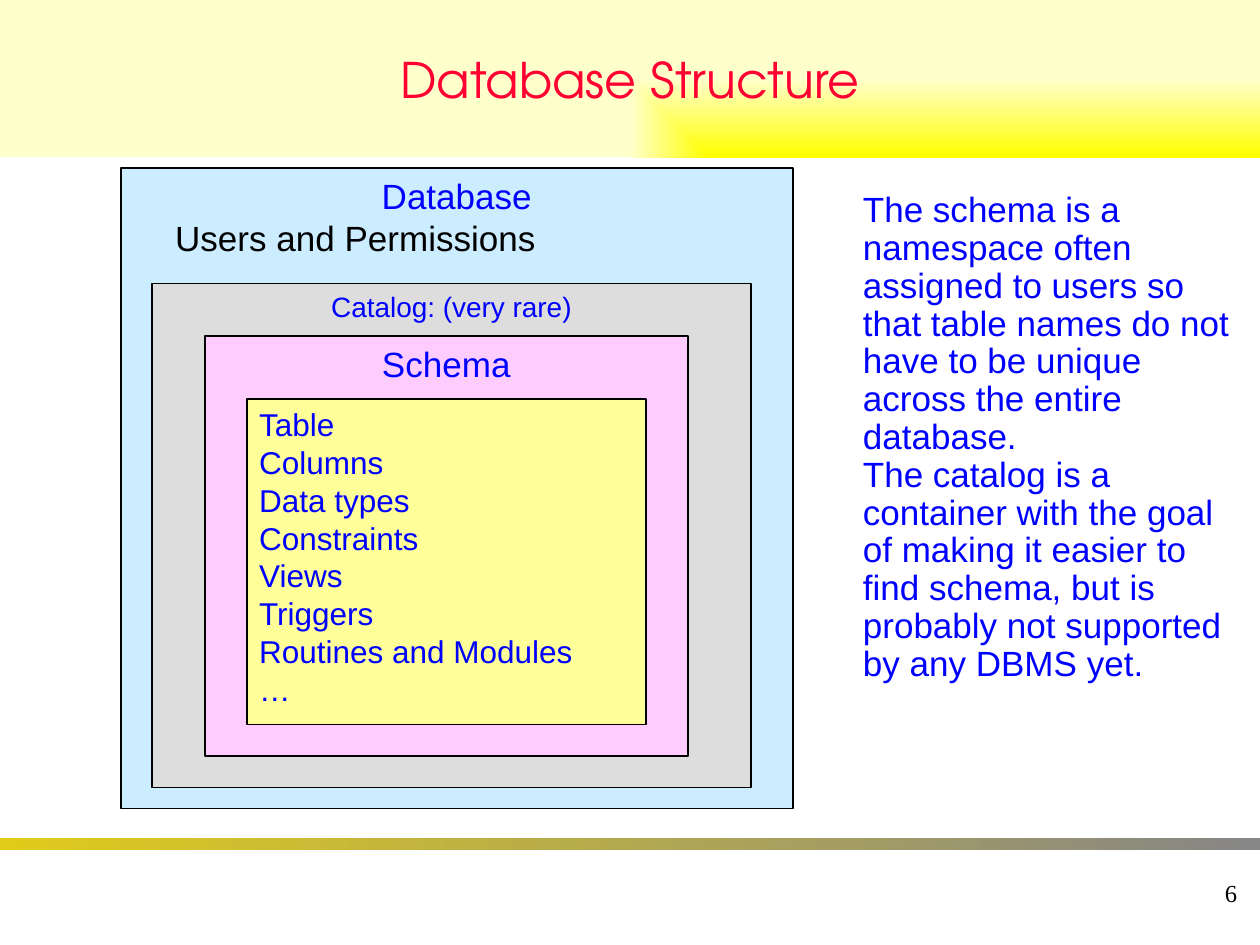
from lxml.etree import SubElement
from pptx import Presentation
from pptx.dml.color import RGBColor
from pptx.enum.shapes import MSO_SHAPE
from pptx.enum.text import MSO_ANCHOR, PP_ALIGN
from pptx.oxml.ns import qn
from pptx.util import Inches, Pt

BLACK = RGBColor(0x00, 0x00, 0x00)
BLUE = RGBColor(0x00, 0x00, 0xFF)
RED = RGBColor(0xFF, 0x00, 0x33)
YELLOW = RGBColor(0xFF, 0xFF, 0x00)
CREAM = RGBColor(0xFF, 0xFF, 0xCC)
GOLD = RGBColor(0xE0, 0xCB, 0x1B)
GRAY = RGBColor(0x86, 0x86, 0x86)
SKY = RGBColor(0xCC, 0xEC, 0xFF)
SILVER = RGBColor(0xDD, 0xDD, 0xDD)
PINK = RGBColor(0xFF, 0xCC, 0xFF)
LEMON = RGBColor(0xFF, 0xFF, 0x99)

prs = Presentation()
prs.slide_width, prs.slide_height = Inches(10), Inches(7.5)
slide = prs.slides.add_slide(prs.slide_layouts[6])
COLS = 240  # square grid, 24 cells to the inch
CELL = prs.slide_width // COLS


def add_box(col, row, cols, rows, fill=None):
    """Add a rectangle with a fill colour or a two-colour gradient, or a text box."""
    place = [int(n * CELL) for n in (col, row, cols, rows)]
    if fill is None:
        return slide.shapes.add_textbox(*place)
    s = slide.shapes.add_shape(MSO_SHAPE.RECTANGLE, *place)
    s.shadow.inherit = False
    if isinstance(fill, RGBColor):
        s.fill.solid()
        s.fill.fore_color.rgb = fill
        s.line.color.rgb = BLACK
        s.line.width = Pt(1)
    else:
        s.fill.gradient()
        s.fill.gradient_angle = 0
        for stop, color in zip(s.fill.gradient_stops, fill):
            stop.color.rgb = color
        s.line.fill.background()
    return s


def write(s, text, size, color=BLUE, font="Arial", align=PP_ALIGN.LEFT,
          anchor=MSO_ANCHOR.TOP, wrap=True, spacing=None):
    tf = s.text_frame
    tf.text = text
    tf.word_wrap = wrap
    tf.vertical_anchor = anchor
    for p in tf.paragraphs:
        p.alignment = align
        p.line_spacing = spacing
        for r in p.runs:
            r.font.size = Pt(size)
            r.font.name = font
            r.font.color.rgb = color


# Footer bar
add_box(0, 159.6, COLS, 2.4, (GOLD, GRAY))

# Title band, its gradient spreading from the bottom right corner
title = add_box(0, 0, COLS, 30, (YELLOW, CREAM))
grad = title.fill._xPr.find(qn("a:gradFill"))
grad.remove(grad.find(qn("a:lin")))
spread = SubElement(grad, qn("a:path"), {"path": "rect"})
SubElement(spread, qn("a:fillToRect"), {"l": "100000", "t": "100000"})
write(title, "Database Structure", 28, RED, "TeX Gyre Adventor",
      PP_ALIGN.CENTER, MSO_ANCHOR.MIDDLE)

# Slide number
write(add_box(188, 164, 50, 12), "6", 14, BLACK, "Times New Roman",
      PP_ALIGN.RIGHT, MSO_ANCHOR.MIDDLE)

# Nested containers, outermost first
containers = [
    ("Database", 20, SKY, (23, 32, 128, 122)),
    ("Catalog: (very rare)", 16, SILVER, (29, 54, 114, 96)),
    ("Schema", 20, PINK, (39, 64, 92, 80)),
]
for label, size, fill, place in containers:
    write(add_box(*place, fill), label, size, align=PP_ALIGN.CENTER, wrap=False)

# Contents of the schema
contents = ["Table", "Columns", "Data types", "Constraints", "Views",
            "Triggers", "Routines and Modules", "…"]
write(add_box(47, 76, 76, 62, LEMON), "\n".join(contents), 18)

# Database-level note
write(add_box(31, 40, 90, 10.4), "Users and Permissions", 20, BLACK)

# Explanation
explanation = [
    "The schema is a namespace often assigned to users so that table names "
    "do not have to be unique across the entire database.",
    "The catalog is a container with the goal of making it easier to find "
    "schema, but is probably not supported by any DBMS yet.",
]
write(add_box(162, 35.5, 75.6, 97), "\n".join(explanation), 20, spacing=0.9)

prs.save("out.pptx")
